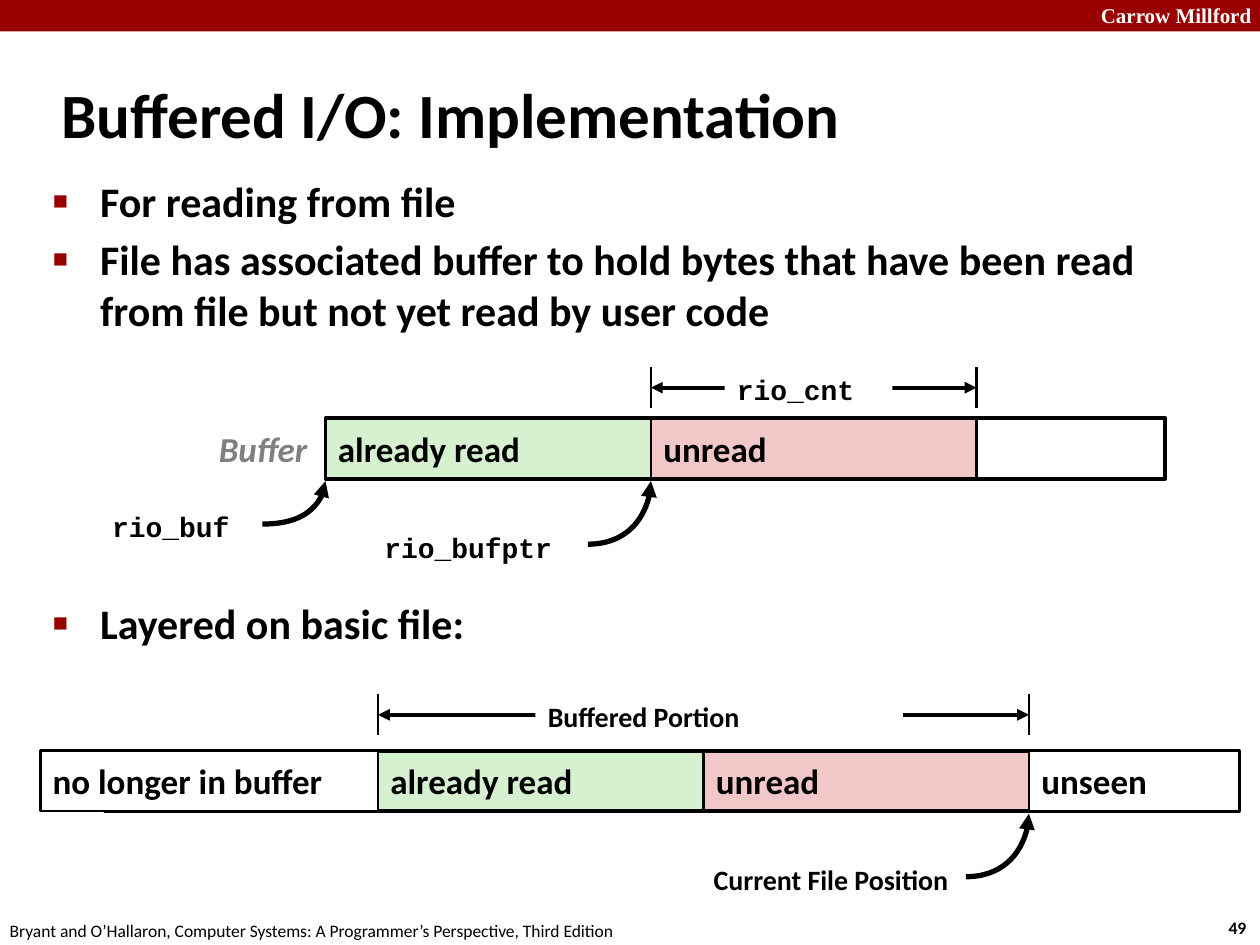
from lxml.etree import SubElement
from pptx import Presentation
from pptx.dml.color import RGBColor
from pptx.enum.shapes import MSO_CONNECTOR as CONN, MSO_SHAPE as SHAPE
from pptx.enum.text import MSO_ANCHOR as ANCHOR, MSO_AUTO_SIZE as AUTO, PP_ALIGN as ALIGN
from pptx.oxml.ns import qn
from pptx.util import Pt

BLACK, WHITE, RED = "000000", "FFFFFF", "990000"
GREEN, PINK, GREY = "D5F1CF", "F1C7C7", "808080"
MONO = "Courier New"
CELL_H = 34.5


def rgb(color):
    return RGBColor.from_string(color)


class Deck:
    """Style of the deck and the slide being drawn."""

    font = "Calibri"

    def __init__(self, width, height):
        self.prs = Presentation()
        self.prs.slide_width, self.prs.slide_height = Pt(width), Pt(height)
        self.s = self.prs.slides.add_slide(self.prs.slide_layouts[1])

    def run(self, p, text, size, color=BLACK, font=None, bold=True, italic=False):
        r = p.add_run()
        r.text = text
        f = r.font
        f.size, f.name, f.bold, f.italic = Pt(size), font or self.font, bold, italic
        f.color.rgb = rgb(color)

    def place(self, sp, x, y, w, h):
        sp.left, sp.top, sp.width, sp.height = Pt(x), Pt(y), Pt(w), Pt(h)

    def title(self, text, *box):
        sp = self.s.shapes.title
        self.place(sp, *box)
        tf = sp.text_frame
        tf.auto_size, tf.vertical_anchor = AUTO.NONE, ANCHOR.MIDDLE
        tf.paragraphs[0].alignment = ALIGN.LEFT
        self.run(tf.paragraphs[0], text, 36)

    def bullets(self, items, *box):
        sp = self.s.placeholders[1]
        self.place(sp, *box)
        tf = sp.text_frame
        tf.auto_size = AUTO.NONE
        for i, (text, before) in enumerate(items):
            p = tf.add_paragraph() if i else tf.paragraphs[0]
            p.space_before = Pt(before)
            pPr = p._p.get_or_add_pPr()
            pPr.set("marL", str(Pt(27)))
            pPr.set("indent", str(-Pt(27)))
            SubElement(SubElement(pPr, qn("a:buClr")), qn("a:srgbClr"), val=RED)
            SubElement(pPr, qn("a:buSzPct"), val="60000")
            SubElement(pPr, qn("a:buChar"), char="■")
            self.run(p, text, 24)

    def label(self, text, x, y, w, h, size=16, align=ALIGN.LEFT, fill=None, **style):
        sp = self.s.shapes.add_textbox(Pt(x), Pt(y), Pt(w), Pt(h))
        if fill:
            sp.fill.solid()
            sp.fill.fore_color.rgb = rgb(fill)
        tf = sp.text_frame
        tf.word_wrap = True
        tf.paragraphs[0].alignment = align
        self.run(tf.paragraphs[0], text, size, **style)

    def rect(self, x, y, w, h, fill=None, line=None, text=None):
        sp = self.s.shapes.add_shape(SHAPE.RECTANGLE, Pt(x), Pt(y), Pt(w), Pt(h))
        sp.shadow.inherit = False
        if fill:
            sp.fill.solid()
            sp.fill.fore_color.rgb = rgb(fill)
        else:
            sp.fill.background()
        if line:
            sp.line.color.rgb, sp.line.width = rgb(BLACK), Pt(line)
        else:
            sp.line.fill.background()
        if text:
            tf = sp.text_frame
            tf.word_wrap, tf.vertical_anchor = True, ANCHOR.MIDDLE
            tf.paragraphs[0].alignment = ALIGN.LEFT
            self.run(tf.paragraphs[0], text, 20)

    def stroke(self, sp, width, *arrow_ends):
        sp.line.color.rgb, sp.line.width = rgb(BLACK), Pt(width)
        for end in arrow_ends:
            SubElement(sp.line._get_or_add_ln(), qn("a:" + end), type="triangle")

    def line(self, x1, y1, x2, y2, width, *arrow_ends):
        sp = self.s.shapes.add_connector(CONN.STRAIGHT, Pt(x1), Pt(y1), Pt(x2), Pt(y2))
        self.stroke(sp, width, *arrow_ends)
        SubElement(sp._element.spPr, qn("a:effectLst"))

    def extent(self, x1, x2, y):
        """Two ticks with a double arrow between them."""
        for x in (x1, x2):
            self.line(x, y + 23.5, x, y, 1.5)
        self.line(x1, y + 12, x2, y + 12, 2.25, "headEnd", "tailEnd")

    def pointer(self, x, y, w, h):
        """Quarter ellipse from lower left, its arrowhead up at (x, y)."""
        k = 0.55
        pts = [(x, y + k * h), (x - (1 - k) * w, y + h), (x - w, y + h)]
        fb = self.s.shapes.build_freeform(Pt(x), Pt(y))
        fb.add_line_segments([(Pt(a), Pt(b)) for a, b in pts], close=False)
        sp = fb.convert_to_shape()
        sp.shadow.inherit = False
        sp.fill.background()
        self.stroke(sp, 3, "headEnd")
        # Turn the three segments into one Bezier curve
        segments = list(sp._element.iter(qn("a:lnTo")))
        outline = segments[0].getparent()
        curve = SubElement(outline, qn("a:cubicBezTo"))
        for seg in segments:
            curve.append(seg[0])
            outline.remove(seg)


def main():
    d = Deck(720, 540)

    # Header and footer
    d.rect(0, 0, 720, 18, fill=RED)
    d.label("Carrow Millford", 622, -2, 103, 21.5, 12, color=WHITE, font="Times New Roman")
    d.label("49", 695, 520.5, 27, 19.5, 10)
    d.label("Bryant and O’Hallaron, Computer Systems: A Programmer’s Perspective, "
            "Third Edition", -1.5, 522, 366, 19.5, 10, bold=False)

    # Title and list; the last item leaves room for the buffer diagram
    d.title("Buffered I/O: Implementation", 28, 34.5, 598, 60)
    d.bullets([
        ("For reading from file", 4.8),
        ("File has associated buffer to hold bytes that have been read "
         "from file but not yet read by user code", 4.8),
        ("Layered on basic file:", 150),
    ], 23, 96.5, 654.5, 312)

    # Buffer in memory
    cell, top = 186, 239
    start, middle, end = (186 + i * cell for i in range(3))
    d.rect(middle, top, cell, CELL_H, PINK, 1.5, "unread")
    d.rect(start, top, cell, CELL_H, GREEN, 1.5, "already read")
    d.rect(start, top, 480, CELL_H, line=2.25)
    d.label("Buffer", 118, 240.5, 67, 31.5, 20, color=GREY, italic=True)
    d.pointer(start, 275, 36, 24.5)
    d.pointer(middle, 275, 36, 36)
    d.label("rio_buf", 57, 287.5, 82, 24.5, font=MONO)
    d.label("rio_bufptr", 212.5, 299.5, 126, 24.5, font=MONO)
    d.extent(middle, end, 209.5)
    d.label("rio_cnt", 414, 209.5, 96, 24.5, fill=WHITE, font=MONO)

    # Underlying file
    top = 429
    start, middle, end = (216 + i * cell for i in range(3))
    d.rect(middle, top, cell, CELL_H, PINK, 1.5, "unread")
    d.rect(start, top, cell, CELL_H, GREEN, 1.5, "already read")
    d.rect(60, top, 648, CELL_H, line=2.25)
    d.rect(23, top, start - 23, CELL_H, WHITE, 1.5, "no longer in buffer")
    d.rect(end, top, 120, CELL_H, WHITE, 1.5, "unseen")
    d.pointer(end, 465, 36, 36)
    d.label("Current File Position", 345, 489.5, 204, 26.5, align=ALIGN.RIGHT)
    d.extent(start, end, 396.5)
    d.label("Buffered Portion", 306, 396, 210, 26.5, fill=WHITE)

    d.prs.save("out.pptx")


if __name__ == "__main__":
    main()
